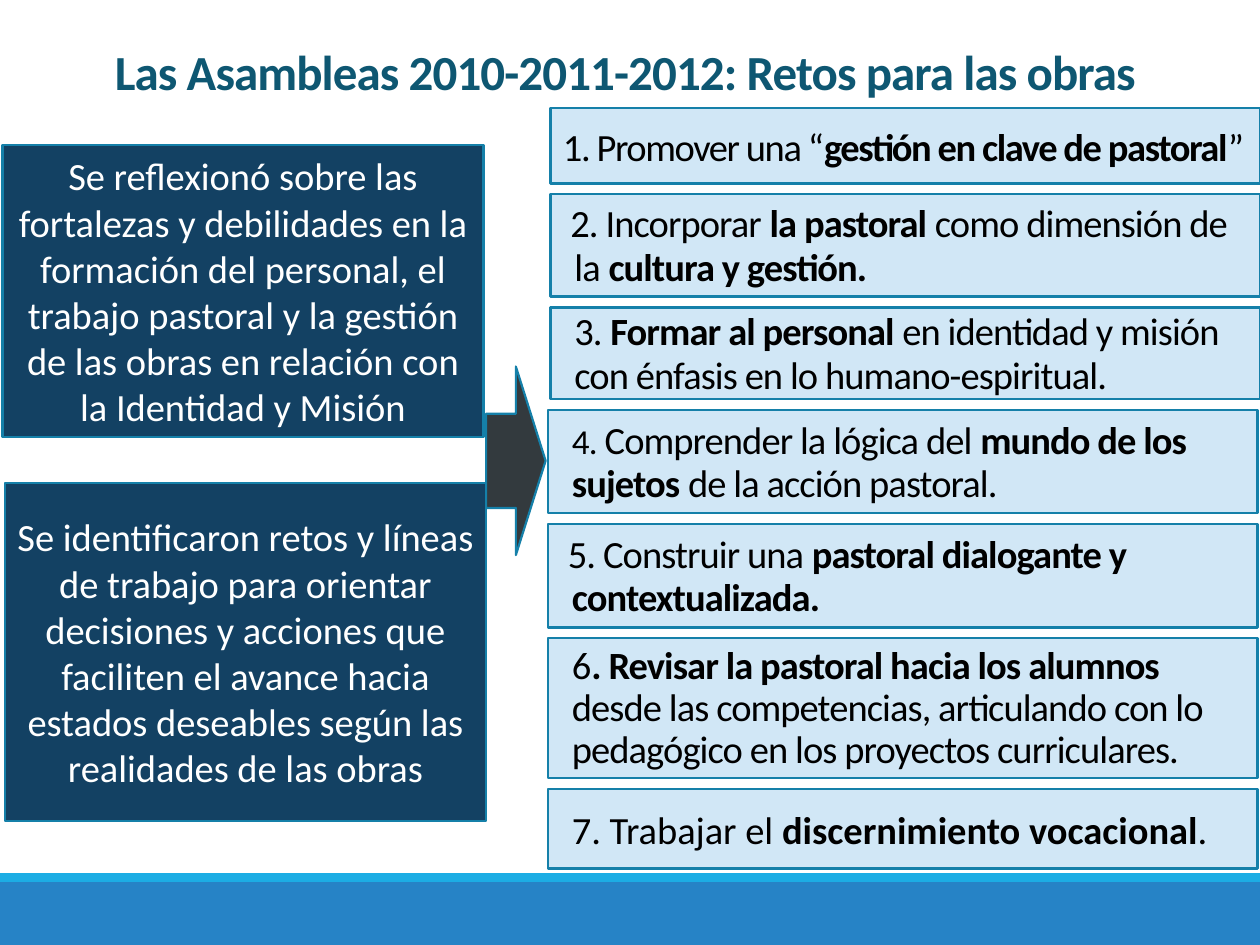
from pptx import Presentation
from pptx.dml.color import RGBColor
from pptx.enum.shapes import MSO_SHAPE
from pptx.enum.text import MSO_ANCHOR, PP_ALIGN
from pptx.util import Cm, Pt

RECTANGLE = MSO_SHAPE.RECTANGLE
ARROW = MSO_SHAPE.RIGHT_ARROW
MIDDLE, BOTTOM = MSO_ANCHOR.MIDDLE, MSO_ANCHOR.BOTTOM
LEFT, CENTER = PP_ALIGN.LEFT, PP_ALIGN.CENTER

COLORS = {
    "footer": "2683C6",
    "stripe": "1CADE4",
    "title": "0E5772",
    "summary": "134163",
    "challenge": "D1E7F6",
    "border": "1580A9",
    "arrow": "333A3E",
    "dark": "000000",
    "light": "FFFFFF",
}

SUMMARIES = [
    (0.05, 2.92, 5.89,
     "Se reflexionó sobre las fortalezas y debilidades en la formación del personal, "
     "el trabajo pastoral y la gestión de las obras en relación con la Identidad y Misión"),
    (0.1, 9.73, 6.83,
     "Se identificaron retos y líneas de trabajo para orientar decisiones y acciones que "
     "faciliten el avance hacia estados deseables según las realidades de las obras"),
]

CHALLENGE_TOP, CHALLENGE_GAP = 2.18, 0.22
CHALLENGES = [
    (11.1, 1.52, [("1. Promover una “",), ("gestión en clave de pastoral", True), ("”",)],
     {"tracking": -0.8, "first": -0.23}),
    (11.1, 2.06, [("2. Incorporar ",), ("la pastoral ", True), ("como dimensión de la ",),
                  ("cultura y gestión.", True)],
     {"tracking": -0.5, "first": -0.08, "spacing": Pt(25)}),
    (11.1, 1.85, [("3. ",), ("Formar al personal ", True),
                  ("en identidad y misión con énfasis en lo humano-espiritual.",)],
     {"tracking": -0.5, "spacing": Pt(25)}),
    (11.05, 2.08, [("4. ", False, 20), ("Comprender la lógica del ",),
                   ("mundo de los sujetos", True), (" de la acción pastoral.",)],
     {"tracking": -0.5, "spacing": Pt(25)}),
    (11.05, 2.08, [("5. Construir una ",), ("pastoral dialogante y contextualizada.", True)],
     {"tracking": -0.5, "first": -0.08, "spacing": Pt(25)}),
    (11.05, 2.82, [("6",), (". Revisar la pastoral hacia los alumnos", True),
                   (" desde las competencias, articulando con lo pedagógico en los "
                    "proyectos curriculares.",)],
     {"tracking": -0.5, "spacing": Pt(24)}),
    (11.05, 1.6, [("7. Trabajar el ",), ("discernimiento vocacional", True), (".",)], {}),
]


def color(name):
    return RGBColor.from_string(COLORS[name])


def write(box, spans, size=22, ink="dark", align=LEFT, anchor=MIDDLE,
          tracking=0, margin=0, first=0, spacing=None):
    frame = box.text_frame
    frame.word_wrap = True
    frame.vertical_anchor = anchor
    para = frame.paragraphs[0]
    para.alignment = align
    if spacing:
        para.line_spacing = spacing
    properties = para._p.get_or_add_pPr()
    properties.set("marL", str(Cm(margin)))
    properties.set("indent", str(Cm(first)))
    for text, bold, points in ((*span, False, size)[:3] if len(span) == 1
                               else (*span, size)[:3] for span in spans):
        span = para.add_run()
        span.text = text
        span.font.name = "Calibri"
        span.font.size = Pt(points)
        span.font.bold = bold
        span.font.color.rgb = color(ink)
        if tracking:
            span._r.get_or_add_rPr().set("spc", str(round(tracking * 100)))


def add_block(page, kind, left, top, width, height, fill, border=None):
    block = page.shapes.add_shape(kind, Cm(left), Cm(top), Cm(width), Cm(height))
    block.shadow.inherit = False
    block.fill.solid()
    block.fill.fore_color.rgb = color(fill)
    if border:
        block.line.color.rgb = color(border)
        block.line.width = Pt(1.25)
    else:
        block.line.fill.background()
    return block


def add_title(page):
    box = page.shapes.add_textbox(Cm(0.1), Cm(0.58), Cm(25), Cm(1.58))
    write(box, [("Las Asambleas 2010-2011-2012: Retos para las obras", True)], size=28,
          ink="title", align=CENTER, anchor=BOTTOM, tracking=-0.5, spacing=0.85)


def add_summaries(page):
    for left, top, height, text in SUMMARIES:
        box = add_block(page, RECTANGLE, left, top, 9.7, height, "summary", "border")
        write(box, [(text,)], ink="light", align=CENTER)


def add_challenges(page):
    top = CHALLENGE_TOP
    for left, height, spans, style in CHALLENGES:
        box = add_block(page, RECTANGLE, left, top, 14.3, height, "challenge", "border")
        write(box, spans, margin=0.23, **style)
        top += height + CHALLENGE_GAP


def main():
    deck = Presentation()
    deck.slide_width, deck.slide_height = Cm(25.4), Cm(19.05)
    page = deck.slides.add_slide(deck.slide_layouts[6])
    add_block(page, RECTANGLE, 0, 17.78, 25.4, 1.27, "footer")
    add_block(page, RECTANGLE, 0, 17.6, 25.4, 0.18, "stripe")
    add_title(page)
    add_summaries(page)
    add_block(page, ARROW, 9.8, 7.39, 1.2, 3.8, "arrow", "border")
    add_challenges(page)
    deck.save("out.pptx")


if __name__ == "__main__":
    main()
